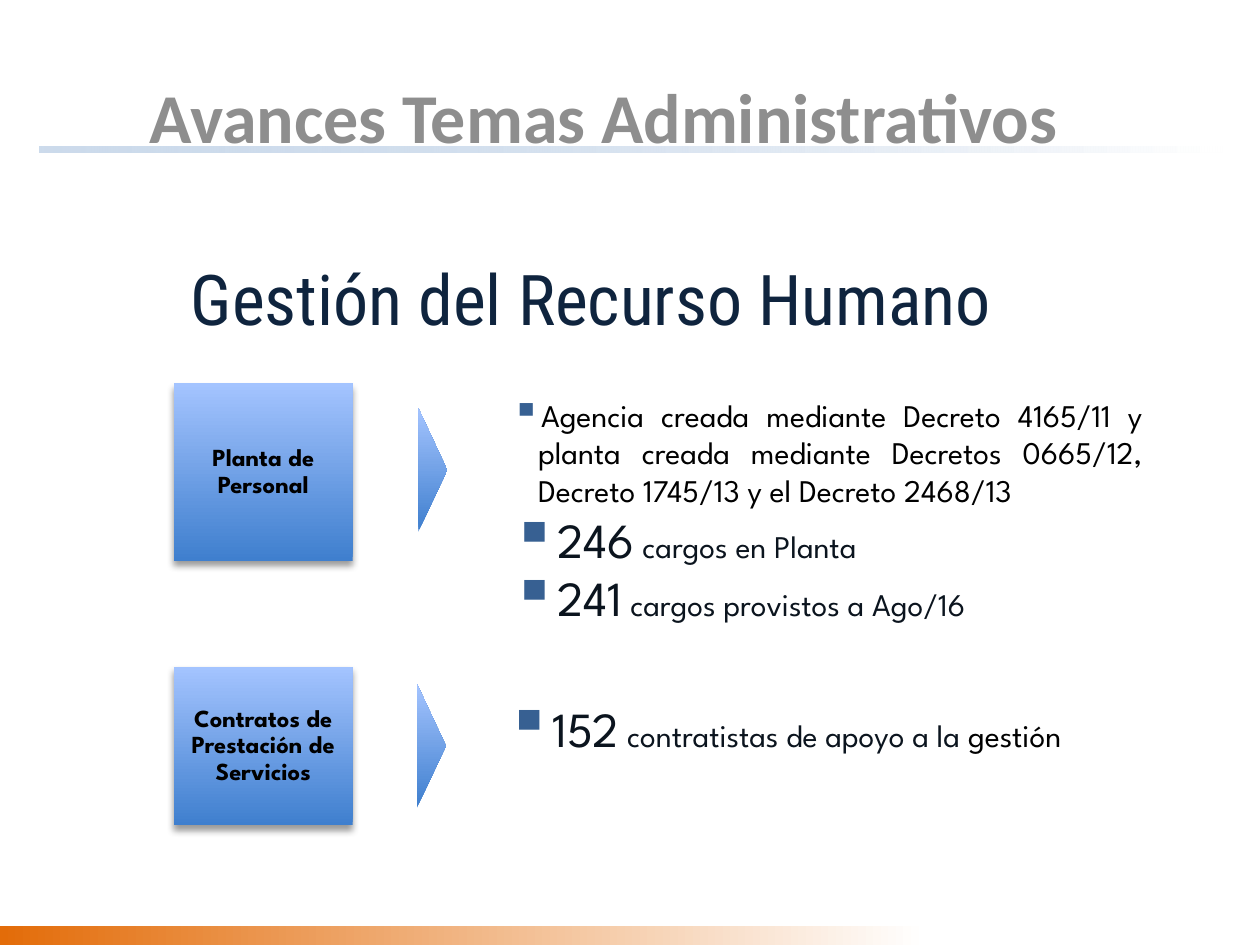
from lxml.etree import SubElement as Sub
from pptx import Presentation
from pptx.dml.color import RGBColor as RGB
from pptx.enum.shapes import MSO_SHAPE as Shape
from pptx.enum.text import MSO_ANCHOR as Anchor, MSO_AUTO_SIZE as Auto, PP_ALIGN as Align
from pptx.oxml.ns import qn
from pptx.util import Inches, Pt

BLACK = RGB(0x00, 0x00, 0x00)
WHITE = RGB(0xFF, 0xFF, 0xFF)
GRAY = RGB(0x8E, 0x8E, 0x8E)
NAVY = RGB(0x0F, 0x24, 0x3E)
INK = RGB(0x0B, 0x14, 0x1E)
MIST = RGB(0x9A, 0xB7, 0xD9)
ORANGE = RGB(0xE3, 0x6C, 0x09)
DEEP = RGB(0x3F, 0x7F, 0xCE)
LIGHT = RGB(0xA4, 0xC4, 0xFF)
MARK = RGB(0x37, 0x60, 0x92)

SPARTAN = "League Spartan"
HEAD = {"name": "Calibri", "size": Pt(40), "bold": True, "color": GRAY}
TOPIC = {"name": "Roboto Condensed", "size": Pt(40), "color": NAVY}
LABEL = {"name": SPARTAN, "size": Pt(14), "bold": True, "color": BLACK}
PLAIN = {"name": SPARTAN, "size": Pt(18), "color": BLACK}
NOTE = {**PLAIN, "color": INK}
BIG = {**NOTE, "size": Pt(28)}

BARS = [
    ((0.31, 1.16, 9.39, 0.05), MIST, 50),
    ((0, 7.35, 7.35, 0.15), ORANGE, 100),
]
ROWS = [
    {
        "label": "Planta de Personal",
        "card": (1.38, 3.04, 1.42, 1.41),
        "arrow": (3.32, 3.24, 0.23, 0.98),
        "text": (4.05, 3.14, 5.02, 2.15),
        "items": [
            (Align.JUSTIFY, [("Agencia creada mediante Decreto 4165/11 y planta creada mediante "
                              "Decretos 0665/12, Decreto 1745/13 y el Decreto 2468/13", PLAIN)]),
            (Align.JUSTIFY, [("246", BIG), (" cargos en Planta", NOTE)]),
            (Align.LEFT, [("241", BIG), (" cargos provistos a Ago/16", NOTE)]),
        ],
    },
    {
        "label": "Contratos de Prestación de Servicios",
        "card": (1.38, 5.29, 1.42, 1.26),
        "arrow": (3.31, 5.43, 0.23, 0.98),
        "text": (4.01, 5.54, 5.02, 0.47),
        "items": [
            (Align.JUSTIFY, [("152", BIG), (" contratistas de apoyo a la ", NOTE),
                             ("gestión", PLAIN)]),
        ],
    },
]


def write(para, runs, align):
    para.alignment = align
    for text, style in runs:
        run = para.add_run()
        run.text = text
        for key, val in style.items():
            if key == "color":
                run.font.color.rgb = val
            else:
                setattr(run.font, key, val)


def frame(shape, pads, anchor=Anchor.TOP):
    body = shape.text_frame
    body.word_wrap = True
    body.auto_size = Auto.NONE
    body.vertical_anchor = anchor
    sides = ("left", "top", "right", "bottom")
    for side, pad in zip(sides, pads):
        setattr(body, "margin_" + side, Inches(pad))
    return body


def block(slide, kind, box, tones, angle):
    shape = slide.shapes.add_shape(kind, *map(Inches, box))
    shape.shadow.inherit = False
    shape.line.fill.background()
    shape.fill.gradient()
    shape.fill.gradient_angle = angle
    for stop, tone in zip(shape.fill.gradient_stops, tones):
        stop.color.rgb = tone
    return shape


def fade(shape, alpha):
    tone = next(shape._element.spPr.iter(qn("a:srgbClr")))
    Sub(tone, qn("a:alpha"), val=str(alpha * 1000))


def shade(shape):
    effects = shape._element.spPr.find(qn("a:effectLst"))
    cast = Sub(effects, qn("a:outerShdw"), blurRad=str(Pt(4)), dist=str(Pt(3)),
               dir="5400000", rotWithShape="0")
    tone = Sub(cast, qn("a:srgbClr"), val=str(BLACK))
    Sub(tone, qn("a:alpha"), val="40000")


def bullet(para):
    props = para._p.get_or_add_pPr()
    props.set("marL", str(Inches(0.22)))
    props.set("indent", str(Inches(-0.21)))
    Sub(Sub(props, qn("a:buClr")), qn("a:srgbClr"), val=str(MARK))
    Sub(props, qn("a:buSzPct"), val="125000")
    Sub(props, qn("a:buChar"), char="▪")


def add_row(slide, row):
    card = block(slide, Shape.RECTANGLE, row["card"], (DEEP, LIGHT), 90)
    shade(card)
    body = frame(card, (0.05, 0.03, 0.05, 0.03), Anchor.MIDDLE)
    body.paragraphs[0].line_spacing = 0.9
    write(body.paragraphs[0], [(row["label"], LABEL)], Align.CENTER)

    arrow = block(slide, Shape.RIGHT_ARROW, row["arrow"], (DEEP, LIGHT), 90)
    arrow.adjustments[0] = 0.55
    arrow.adjustments[1] = 1

    body = frame(slide.shapes.add_textbox(*map(Inches, row["text"])), (0, 0, 0, 0))
    for num, (align, runs) in enumerate(row["items"]):
        para = body.add_paragraph() if num else body.paragraphs[0]
        bullet(para)
        write(para, runs, align)


def main():
    deck = Presentation()
    deck.slide_width, deck.slide_height = Inches(10), Inches(7.5)
    slide = deck.slides.add_slide(deck.slide_layouts[5])
    title = slide.shapes.title
    pads = (0.1, 0.05, 0.1, 0.05)

    for box, tone, alpha in BARS:
        fade(block(slide, Shape.RECTANGLE, box, (tone, WHITE), 0), alpha)

    topic = slide.shapes.add_textbox(*map(Inches, (0.12, 1.98, 9.14, 0.77)))
    write(frame(topic, pads).paragraphs[0],
          [("Gestión del Recurso Humano", TOPIC)], Align.CENTER)

    for row in ROWS:
        add_row(slide, row)

    title.left, title.top, title.width, title.height = map(Inches, (1.01, 0.53, 7.56, 1.45))
    write(frame(title, pads).paragraphs[0],
          [("Avances Temas Administrativos", HEAD)], Align.CENTER)
    slide.shapes._spTree.append(title._element)
    deck.save("out.pptx")


if __name__ == "__main__":
    main()
